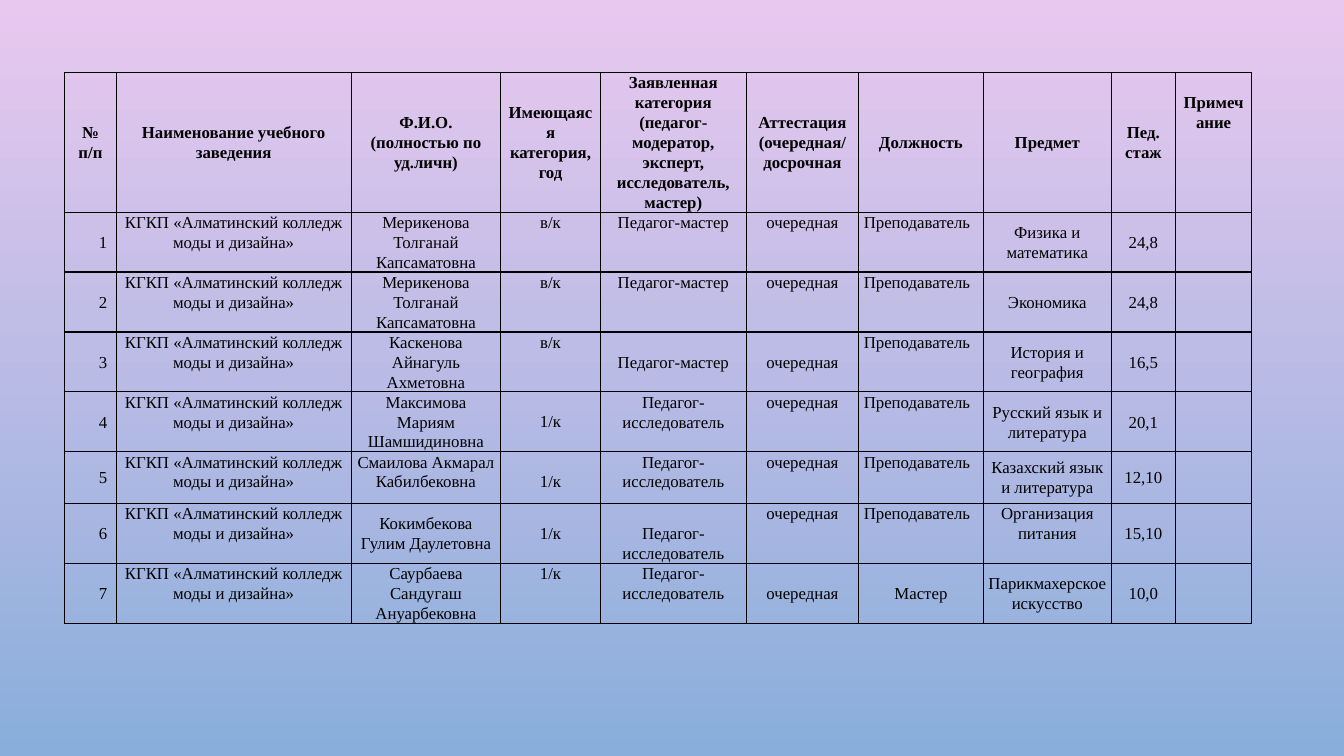
from dataclasses import dataclass

from lxml import etree
from pptx import Presentation
from pptx import util as u
from pptx.dml.color import RGBColor
from pptx.enum import text
from pptx.oxml.ns import qn


@dataclass(frozen=True)
class Theme:
    font: str = "Times New Roman"
    size: int = 12
    ink: str = "000000"
    top: str = "E9C8EF"
    base: str = "89AEDB"
    rule: float = 1
    lead: float = 1.07
    pad: float = 0.13
    inset: float = 0.23
    drop: float = 0.5


THEME = Theme()
COLLEGE = "КГКП «Алматинский колледж моды и дизайна»"
MASTER = "Педагог-мастер"
EXPERT = "Педагог- исследователь"
DUE = "очередная"
TEACHER = "Преподаватель"

HEAD = ["№\nп/п", "Наименование учебного заведения",
        "Ф.И.О.\n(полностью по уд.личн)",
        "Имеющаяся категория,\nгод",
        "Заявленная категория\n(педагог-модератор, эксперт, исследователь, мастер)",
        "Аттестация (очередная/ досрочная", "Должность", "Предмет",
        "Пед.\nстаж", "Примечание"]
STAFF = [
    ("Мерикенова Толганай Капсаматовна", "в/к", MASTER, TEACHER, "Физика и математика", "24,8"),
    ("Мерикенова Толганай Капсаматовна", "в/к", MASTER, TEACHER, "Экономика", "24,8"),
    ("Каскенова Айнагуль Ахметовна", "в/к", MASTER, TEACHER, "История и география", "16,5"),
    ("Максимова Мариям Шамшидиновна", "1/к", EXPERT, TEACHER, "Русский язык и литература", "20,1"),
    ("Смаилова Акмарал Кабилбековна", "1/к", EXPERT, TEACHER, "Казахский язык и литература", "12,10"),
    ("Кокимбекова Гулим Даулетовна", "1/к", EXPERT, TEACHER, "Организация питания", "15,10"),
    ("Саурбаева Сандугаш Ануарбековна", "1/к", EXPERT, "Мастер", "Парикмахерское искусство", "10,0"),
]
# Per row, one letter a cell: M middle, T top, D one line below the top
PLACES = ["MMMMMMMMMD", "MTTTTTTMMT", "MTTTTTTMMT", "MTTTDMTMMT",
          "MTTDTTTMMT", "MTTDTTTMMT", "MTMMDTTTMT", "MTTTTMMMMT"]
WIDTHS = [1.3, 5.92, 3.77, 2.51, 3.68, 2.83, 3.14, 3.23, 1.61, 1.93]
HEIGHTS = [3.5, 1.51, 1.51, 1.51, 1.51, 1.3, 1.51, 1.51]


def paint(slide):
    """Fill the background with the theme gradient, top to bottom."""
    fill = slide.background.fill
    fill.gradient()
    fill.gradient_angle = 270
    for stop, tone in zip(fill.gradient_stops, (THEME.top, THEME.base)):
        stop.color.rgb = RGBColor.from_string(tone)


def frame(cell):
    """Rule all four sides of a cell and leave it unfilled."""
    props = cell._tc.get_or_add_tcPr()
    for side in ("lnL", "lnR", "lnT", "lnB"):
        line = etree.SubElement(props, qn("a:" + side), w=str(u.Pt(THEME.rule)))
        solid = etree.SubElement(line, qn("a:solidFill"))
        etree.SubElement(solid, qn("a:srgbClr"), val=THEME.ink)
    cell.fill.background()


def write(cell, words, place, align, bold):
    cell.margin_left = cell.margin_right = u.Cm(THEME.pad)
    cell.margin_top = u.Cm(THEME.drop if place == "D" else 0)
    cell.margin_bottom = 0
    if align == text.PP_ALIGN.RIGHT:
        cell.margin_right = u.Cm(THEME.inset)
    anchor = text.MSO_ANCHOR
    cell.vertical_anchor = anchor.MIDDLE if place == "M" else anchor.TOP
    cell.text = words
    for para in cell.text_frame.paragraphs:
        para.alignment = align
        para.line_spacing = THEME.lead
        font = para.font
        font.name, font.size, font.bold = THEME.font, u.Pt(THEME.size), bold
        font.color.rgb = RGBColor.from_string(THEME.ink)


def choose(row, col, place):
    """Numbers go right, top-set posts go left, the rest is centred."""
    if row and col == 0:
        return text.PP_ALIGN.RIGHT
    if row and col == 6 and place == "T":
        return text.PP_ALIGN.LEFT
    return text.PP_ALIGN.CENTER


def roster(slide, left, top):
    rows = [HEAD] + [
        [str(num), COLLEGE, name, rank, goal, DUE, post, topic, years, ""]
        for num, (name, rank, goal, post, topic, years) in enumerate(STAFF, 1)]
    table = slide.shapes.add_table(
        len(rows), len(WIDTHS), u.Cm(left), u.Cm(top),
        u.Cm(sum(WIDTHS)), u.Cm(sum(HEIGHTS))).table
    table.first_row = table.horz_banding = False
    for column, width in zip(table.columns, WIDTHS):
        column.width = u.Cm(width)
    for line, height in zip(table.rows, HEIGHTS):
        line.height = u.Cm(height)
    for row, (items, places) in enumerate(zip(rows, PLACES)):
        for col, (words, place) in enumerate(zip(items, places)):
            cell = table.cell(row, col)
            write(cell, words, place, choose(row, col, place), row == 0)
            frame(cell)


def main():
    deck = Presentation()
    deck.slide_width, deck.slide_height = u.Cm(33.87), u.Cm(19.05)
    slide = deck.slides.add_slide(deck.slide_layouts[6])
    paint(slide)
    roster(slide, 1.63, 1.83)
    deck.save("out.pptx")


if __name__ == "__main__":
    main()
